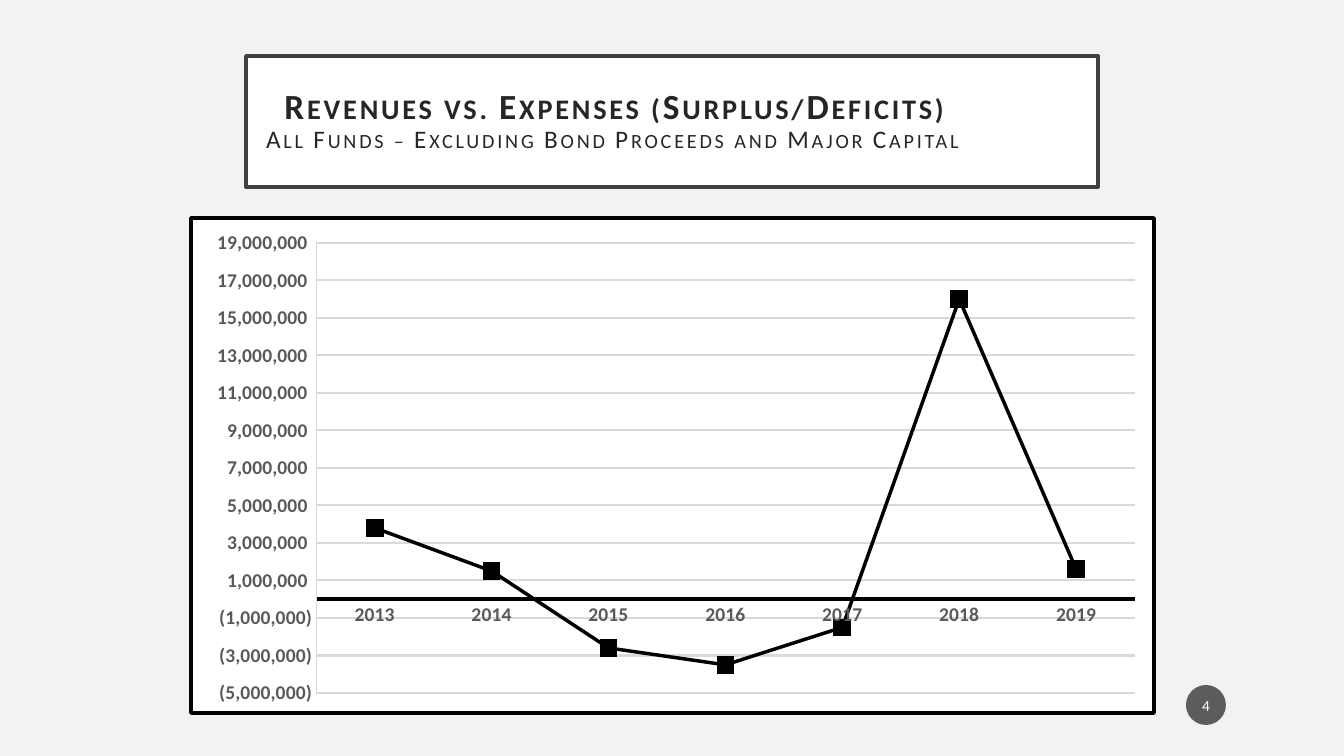
"""Builds the revenues versus expenses slide with its line chart."""
import copy

from lxml import etree
from pptx import Presentation
from pptx import util as u
from pptx.chart import data
from pptx.dml.color import RGBColor
from pptx.enum import chart as ch, shapes, text
from pptx.oxml import parse_xml
from pptx.oxml.ns import nsdecls, qn

PX = 914400 / 100.8
BLACK = RGBColor(0x00, 0x00, 0x00)
WHITE = RGBColor(0xFF, 0xFF, 0xFF)
BACKGROUND = RGBColor(0xF2, 0xF2, 0xF2)
FRAME = RGBColor(0x40, 0x40, 0x40)
TITLE = RGBColor(0x26, 0x26, 0x26)
LABEL = RGBColor(0x59, 0x59, 0x59)
GRID = RGBColor(0xD9, 0xD9, 0xD9)
BADGE = RGBColor(0x1D, 0x1D, 0x1D)

YEARS = [str(year) for year in range(2013, 2020)]
SURPLUS = [3800000, 1500000, -2600000, -3500000, -1500000, 16000000, 1600000]
MONEY = r'_(* #,##0_);_(* \(#,##0\);_(* "-"??_);_('


def px(n):
    return u.Emu(round(n * PX))


class Deck:
    font = "Calibri"

    def __init__(self, width, height):
        self.prs = Presentation()
        self.prs.slide_width, self.prs.slide_height = px(width), px(height)
        self.s = self.prs.slides.add_slide(self.prs.slide_layouts[5])
        fill = self.s.background.fill
        fill.solid()
        fill.fore_color.rgb = BACKGROUND

    def style(self, font, size, color, bold=False):
        font.name, font.size, font.bold = self.font, u.Pt(size), bold
        font.color.rgb = color

    def line(self, line, color, width):
        line.color.rgb = color
        line.width = u.Pt(width)

    def frame(self, tf, side, top):
        tf.word_wrap = True
        tf.auto_size = text.MSO_AUTO_SIZE.NONE
        tf.vertical_anchor = text.MSO_ANCHOR.MIDDLE
        tf.margin_left = tf.margin_right = px(side)
        tf.margin_top = tf.margin_bottom = px(top)
        tf.paragraphs[0].alignment = text.PP_ALIGN.CENTER

    def title(self, box, heading, subtitle):
        sp = self.s.shapes.title
        sp.left, sp.top, sp.width, sp.height = map(px, box)
        sp.fill.solid()
        sp.fill.fore_color.rgb = WHITE
        self.line(sp.line, FRAME, 2.5)
        tf = sp.text_frame
        tf.text = heading + "\v" + subtitle
        self.frame(tf, 20, 20)
        p = tf.paragraphs[0]
        p.line_spacing = 0.9
        for r, size, bold in zip(p.runs, (25.2, 18), (True, False)):
            self.style(r.font, size, TITLE, bold)
            rPr = r._r.get_or_add_rPr()
            rPr.set("spc", "200")
            rPr.set("cap", "small")
        br = p._p.find(qn("a:br"))
        br.append(copy.deepcopy(p.runs[0]._r.rPr))

    def badge(self, box, label):
        sp = self.s.shapes.add_shape(shapes.MSO_SHAPE.OVAL, *map(px, box))
        sp.shadow.inherit = False
        sp.fill.solid()
        sp.fill.fore_color.rgb = BADGE
        color = sp._element.spPr.find(".//" + qn("a:srgbClr"))
        etree.SubElement(color, qn("a:alpha"), val="70000")
        sp.line.fill.background()
        tf = sp.text_frame
        tf.text = label
        self.frame(tf, 2, 5)
        self.style(tf.paragraphs[0].runs[0].font, 11, WHITE)

    def axis(self, axis, color, width):
        axis.major_tick_mark = axis.minor_tick_mark = ch.XL_TICK_MARK.NONE
        self.style(axis.tick_labels.font, 14, LABEL, True)
        self.line(axis.format.line, color, width)

    def line_chart(self, box, categories, values):
        cd = data.CategoryChartData()
        cd.categories = categories
        cd.add_series("Series 1", values)
        chart = self.s.shapes.add_chart(
            ch.XL_CHART_TYPE.LINE_MARKERS, *map(px, box), cd).chart
        chart.has_legend = chart.has_title = False
        self.style(chart.font, 10, BLACK)

        self.axis(chart.category_axis, BLACK, 2.75)
        va = chart.value_axis
        self.axis(va, GRID, 0.75)
        va.minimum_scale, va.maximum_scale = -5000000, 19000000
        va.major_unit = 2000000
        va.has_major_gridlines = True
        self.line(va.major_gridlines.format.line, GRID, 1.5)
        va.tick_labels.number_format = MONEY
        va.tick_labels.number_format_is_linked = False

        chart.plots[0].vary_by_categories = False
        series = chart.plots[0].series[0]
        series.smooth = False
        self.line(series.format.line, BLACK, 2.5)
        marker = series.marker
        marker.style, marker.size = ch.XL_MARKER_STYLE.SQUARE, 12
        marker.format.fill.solid()
        marker.format.fill.fore_color.rgb = BLACK
        marker.format.line.color.rgb = BLACK
        self.chart_area(chart)

    def chart_area(self, chart):
        space = chart._chartSpace
        space.find(qn("c:chart")).addnext(parse_xml(
            f'<c:spPr {nsdecls("c", "a")}>'
            f'<a:solidFill><a:srgbClr val="{WHITE}"/></a:solidFill>'
            f'<a:ln w="{u.Pt(3)}"><a:solidFill><a:srgbClr val="{BLACK}"/>'
            '</a:solidFill><a:round/></a:ln></c:spPr>'))
        area = space.find(".//" + qn("c:plotArea"))
        for old in area.findall(qn("c:layout")):
            area.remove(old)
        layout = etree.Element(qn("c:layout"))
        manual = etree.SubElement(layout, qn("c:manualLayout"))
        for tag, val in (("layoutTarget", "inner"), ("xMode", "edge"),
                         ("yMode", "edge"), ("x", "0.13"), ("y", "0.05"),
                         ("w", "0.85"), ("h", "0.91")):
            etree.SubElement(manual, qn("c:" + tag), val=val)
        area.insert(0, layout)


def main():
    deck = Deck(1344, 756)
    deck.title((246, 56, 852, 131), "Revenues vs. Expenses (Surplus/Deficits)",
               "All Funds – Excluding Bond Proceeds and Major Capital")
    deck.line_chart((189, 216, 967, 499), YEARS, SURPLUS)
    deck.badge((1186, 685, 40, 40), "4")
    deck.prs.save("out.pptx")


if __name__ == "__main__":
    main()
